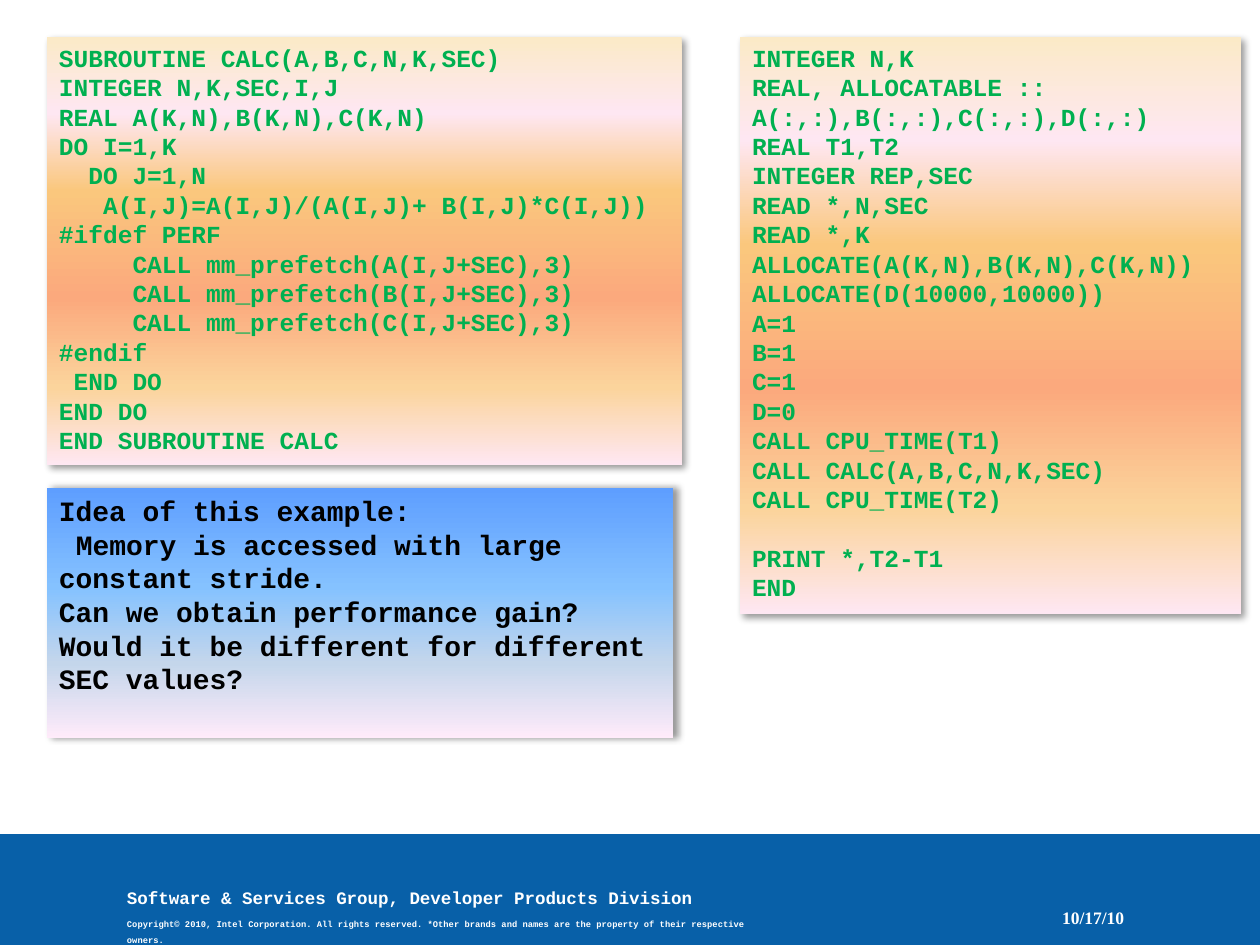
from pptx import Presentation
from pptx.dml.color import RGBColor
from pptx.enum.shapes import MSO_SHAPE
from pptx.enum.text import MSO_ANCHOR, PP_ALIGN
from pptx.oxml import parse_xml
from pptx.oxml.ns import nsdecls, qn
from pptx.util import Inches, Pt

MONO = "Courier New"
SERIF = "Times New Roman"
GREEN = "00B050"
WHITE = "FFFFFF"
WARM = [(0, "FBEAC7"), (18, "FEE7F2"), (36, "FAC77D"),
        (61, "FBA97D"), (82, "FBD49C"), (100, "FEE7F2")]
COOL = [(0, "5E9EFF"), (40, "85C2FF"), (70, "C4D6EB"), (100, "FFEBFA")]

SUBROUTINE = """SUBROUTINE CALC(A,B,C,N,K,SEC)
INTEGER N,K,SEC,I,J
REAL A(K,N),B(K,N),C(K,N)
DO I=1,K
  DO J=1,N
   A(I,J)=A(I,J)/(A(I,J)+ B(I,J)*C(I,J))
#ifdef PERF
     CALL mm_prefetch(A(I,J+SEC),3)
     CALL mm_prefetch(B(I,J+SEC),3)
     CALL mm_prefetch(C(I,J+SEC),3)
#endif
 END DO
END DO
END SUBROUTINE CALC"""

PROGRAM = """INTEGER N,K
REAL, ALLOCATABLE :: A(:,:),B(:,:),C(:,:),D(:,:)
REAL T1,T2
INTEGER REP,SEC
READ *,N,SEC
READ *,K
ALLOCATE(A(K,N),B(K,N),C(K,N))
ALLOCATE(D(10000,10000))
A=1
B=1
C=1
D=0
CALL CPU_TIME(T1)
CALL CALC(A,B,C,N,K,SEC)
CALL CPU_TIME(T2)
PRINT *,T2-T1
END"""

IDEA = """Idea of this example:
Memory is accessed with large constant stride.
Can we obtain performance gain? Would it be different for different SEC values?"""


def rgb(color):
    """Turn a hex string into a colour."""
    return RGBColor.from_string(color)


def add_line(tf, index, text, size, color, font=MONO, spacing=None):
    """Write one bold paragraph into a text frame and return it."""
    p = tf.add_paragraph() if index else tf.paragraphs[0]
    p.alignment = PP_ALIGN.LEFT
    p.line_spacing = spacing
    r = p.add_run()
    r.text = text
    r.font.name = font
    r.font.size = Pt(size)
    r.font.bold = True
    r.font.color.rgb = rgb(color)
    return p


def add_rect(slide, x, y, w, h):
    """Add a rectangle without outline or shadow."""
    sp = slide.shapes.add_shape(MSO_SHAPE.RECTANGLE, Inches(x), Inches(y),
                                Inches(w), Inches(h))
    sp.line.fill.background()
    sp.shadow.inherit = False
    return sp


def add_textbox(slide, x, y, w, h, wrap):
    """Add an empty text box and return its text frame."""
    sp = slide.shapes.add_textbox(Inches(x), Inches(y), Inches(w), Inches(h))
    sp.text_frame.word_wrap = wrap
    return sp.text_frame


def set_gradient(sp, stops):
    """Fill a shape with colour stops that run from top to bottom."""
    sp.fill.gradient()
    sp.fill.gradient_angle = 270
    stop_list = sp._element.spPr.find(qn("a:gradFill")).find(qn("a:gsLst"))
    for old in list(stop_list):
        stop_list.remove(old)
    for position, color in stops:
        stop_list.append(parse_xml(
            f'<a:gs {nsdecls("a")} pos="{position * 1000}">'
            f'<a:srgbClr val="{color}"/></a:gs>'))


def set_shadow(sp, angle):
    """Give a shape a soft outer shadow."""
    sp._element.spPr.find(qn("a:effectLst")).append(parse_xml(
        f'<a:outerShdw {nsdecls("a")} blurRad="{Pt(4)}" dist="{Pt(3)}" '
        f'dir="{angle * 60000}" algn="tl" rotWithShape="0">'
        '<a:srgbClr val="000000"><a:alpha val="40000"/></a:srgbClr>'
        '</a:outerShdw>'))


def add_panel(slide, box, text, size, color, stops, angle):
    """Add a gradient panel with one paragraph per line of text."""
    sp = add_rect(slide, *box)
    set_gradient(sp, stops)
    set_shadow(sp, angle)
    tf = sp.text_frame
    tf.word_wrap = True
    tf.vertical_anchor = MSO_ANCHOR.TOP
    return [add_line(tf, i, line, size, color, spacing=Pt(1.2 * size))
            for i, line in enumerate(text.splitlines())]


def add_footer(slide):
    """Add the blue band with the group name, copyright line and date."""
    band = add_rect(slide, 0, 6.62, 10, 0.88)
    band.fill.solid()
    band.fill.fore_color.rgb = rgb("0860A8")

    tf = add_textbox(slide, 0.91, 6.96, 5.13, 0.45, False)
    add_line(tf, 0, "Software & Services Group, Developer Products Division",
             10, WHITE, spacing=1.2)
    p = add_line(tf, 1, "Copyright© 2010, Intel Corporation. All rights reserved. "
                 "*Other brands and names are the property of their respective owners.",
                 5, WHITE, spacing=1.5)
    p.space_before = Pt(3.1)

    tf = add_textbox(slide, 7.81, 7.1, 1.21, 0.4, True)
    tf.vertical_anchor = MSO_ANCHOR.MIDDLE
    p = add_line(tf, 0, "10/17/10", 10, WHITE, SERIF, 0.8)
    p.alignment = PP_ALIGN.RIGHT


def main():
    """Build the slide and save it."""
    prs = Presentation()
    prs.slide_width, prs.slide_height = Inches(10), Inches(7.5)
    slide = prs.slides.add_slide(prs.slide_layouts[6])
    add_footer(slide)
    add_panel(slide, (0.37, 0.29, 5.04, 3.4), SUBROUTINE, 14, GREEN, WARM, 45)
    idea = add_panel(slide, (0.37, 3.87, 4.97, 1.99), IDEA, 16, "000000", COOL, 0)
    idea[1]._p.get_or_add_pPr().set("indent", str(Pt(9.6)))
    program = add_panel(slide, (5.87, 0.29, 3.98, 4.58), PROGRAM, 14, GREEN, WARM, 45)
    program[-2].space_before = Pt(16.8)
    prs.save("out.pptx")


if __name__ == "__main__":
    main()
